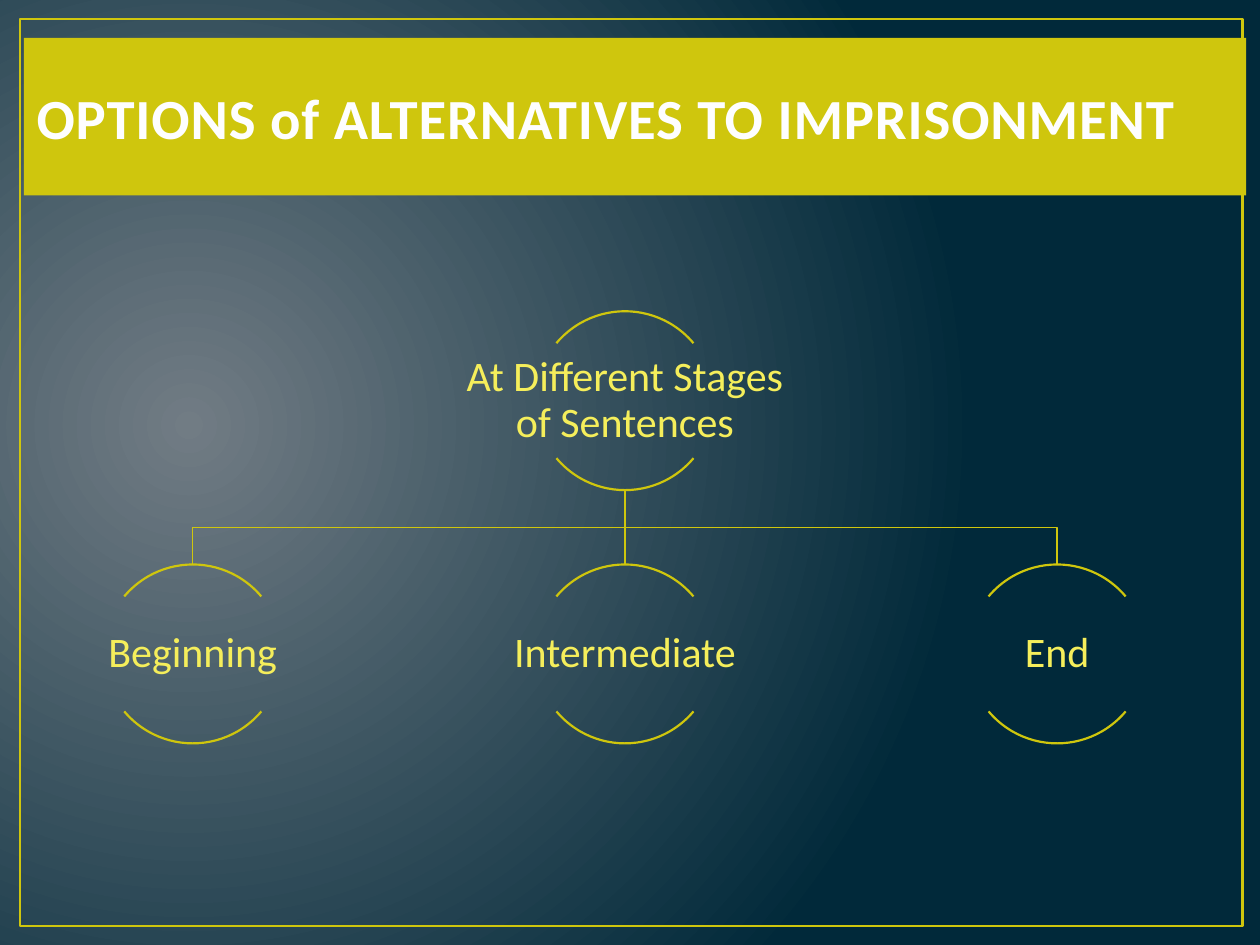
from pptx import Presentation
from pptx.dml.color import RGBColor
from pptx.enum.shapes import MSO_CONNECTOR as CONN, MSO_SHAPE as SHAPE
from pptx.enum.text import MSO_ANCHOR as ANCHOR, MSO_AUTO_SIZE as FIT, PP_ALIGN as ALIGN
from pptx.oxml import parse_xml
from pptx.oxml.ns import nsdecls, qn
from pptx.util import Inches, Pt

COLORS = {"glow": "717C84", "night": "01293A", "accent": "CFC60D",
          "title": "FEFEFE", "label": "F5EE5B"}
STAGES = ["Beginning", "Intermediate", "End"]
NODE, PITCH, DROP = 1.42, 3.43, 0.59


def rgb(name):
    """Return a named palette colour."""
    return RGBColor.from_string(COLORS[name])


def outline(sp, width):
    """Leave a shape unfilled with an accent line and no shadow."""
    sp.fill.background()
    sp.line.color.rgb = rgb("accent")
    sp.line.width = Pt(width)
    sp.shadow.inherit = False


def set_font(p, size, color, bold=False):
    """Format a whole paragraph."""
    p.font.name = "Calibri"
    p.font.size = Pt(size)
    p.font.bold = bold
    p.font.color.rgb = rgb(color)


def add_background(s):
    """Fill the slide with an off-centre radial gradient."""
    fill = s.background.fill
    fill.gradient()
    for stop, name in zip(fill.gradient_stops, ("glow", "night")):
        stop.color.rgb = rgb(name)
    grad = s._element.find(".//" + qn("a:gradFill"))
    radial = parse_xml(
        f'<a:path {nsdecls("a")} path="circle">'
        '<a:fillToRect l="15000" t="50000" r="85000" b="60000"/></a:path>')
    grad.replace(grad.find(qn("a:lin")), radial)


def add_frame(s, x, y, w, h):
    """Draw the thin border around the slide."""
    sp = s.shapes.add_shape(SHAPE.RECTANGLE, Inches(x), Inches(y), Inches(w), Inches(h))
    outline(sp, 1.5)


def add_title(s, text, x, y, w, h):
    """Place the title placeholder as a filled band above the frame."""
    sp = s.shapes.title
    sp.left, sp.top, sp.width, sp.height = (Inches(v) for v in (x, y, w, h))
    sp.fill.solid()
    sp.fill.fore_color.rgb = rgb("accent")
    tf = sp.text_frame
    tf.text = text
    tf.auto_size = FIT.NONE
    tf.vertical_anchor = ANCHOR.MIDDLE
    p = tf.paragraphs[0]
    p.alignment = ALIGN.LEFT
    set_font(p, 32.4, "title", bold=True)
    p.runs[0].font._element.set("spc", "50")
    s.shapes._spTree.append(sp._element)


def add_node(s, text, cx, y):
    """Draw a label between two arcs of a circle centred on cx."""
    for start, end in ((132, 192), (24, 84)):
        arc = s.shapes.add_shape(SHAPE.ARC, Inches(cx - NODE / 2), Inches(y),
                                 Inches(NODE), Inches(NODE))
        arc.adjustments[0], arc.adjustments[1] = start, end
        outline(arc, 1.25)
    w, h = 2 * NODE, 0.91
    box = s.shapes.add_textbox(Inches(cx - w / 2), Inches(y + (NODE - h) / 2),
                               Inches(w), Inches(h))
    tf = box.text_frame
    tf.word_wrap = True
    tf.vertical_anchor = ANCHOR.MIDDLE
    tf.margin_left = tf.margin_right = tf.margin_top = tf.margin_bottom = Inches(0.02)
    tf.text = text
    p = tf.paragraphs[0]
    p.alignment = ALIGN.CENTER
    p.line_spacing = 0.9
    set_font(p, 24, "label")


def add_branch(s, x1, x2, y):
    """Link a parent at x1 to a child at x2, one drop lower."""
    if x1 == x2:
        line = s.shapes.add_connector(CONN.STRAIGHT, Inches(x1), Inches(y),
                                      Inches(x2), Inches(y + DROP))
        line.line.color.rgb = rgb("accent")
        line.line.width = Pt(0.75)
        line._element.spPr.append(parse_xml(f'<a:effectLst {nsdecls("a")}/>'))
        return
    mid = y + DROP / 2
    points = [(x1, mid), (x2, mid), (x2, y + DROP)]
    builder = s.shapes.build_freeform(Inches(x1), Inches(y))
    builder.add_line_segments([(Inches(a), Inches(b)) for a, b in points], close=False)
    outline(builder.convert_to_shape(), 0.75)


def add_hierarchy(s, root, children, cx, y):
    """Draw a root node with a centred row of children below it."""
    base = y + NODE
    centers = [cx + (i - (len(children) - 1) / 2) * PITCH for i in range(len(children))]
    for x in reversed(centers):
        add_branch(s, cx, x, base)
    add_node(s, root, cx, y)
    for text, x in zip(children, centers):
        add_node(s, text, x, base + DROP)


def main():
    """Build and save the slide."""
    prs = Presentation()
    prs.slide_width, prs.slide_height = Inches(10), Inches(7.5)
    s = prs.slides.add_slide(prs.slide_layouts[5])
    add_background(s)
    add_frame(s, 0.16, 0.15, 9.7, 7.2)
    add_title(s, "OPTIONS of ALTERNATIVES TO IMPRISONMENT", 0.19, 0.3, 9.7, 1.25)
    add_hierarchy(s, "At Different Stages of Sentences", STAGES, 4.96, 2.47)
    prs.save("out.pptx")


if __name__ == "__main__":
    main()
